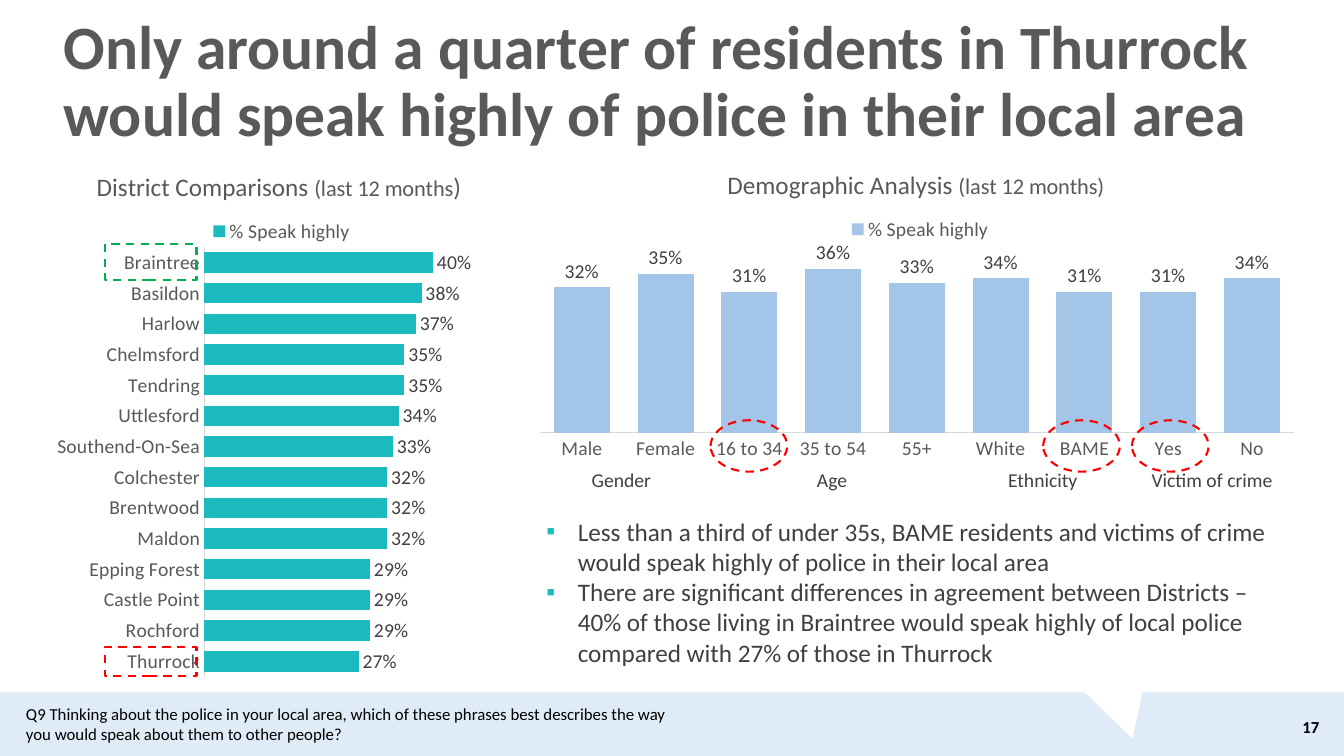
from dataclasses import dataclass
from typing import Any, Optional

from lxml.etree import SubElement
from pptx import Presentation
from pptx.chart.data import CategoryChartData
from pptx.dml.color import RGBColor as Rgb
from pptx.enum.chart import XL_CHART_TYPE as ChartType
from pptx.enum.chart import XL_LABEL_POSITION as LabelPos
from pptx.enum.chart import XL_LEGEND_POSITION as LegendPos
from pptx.enum.chart import XL_TICK_MARK as Tick
from pptx.enum.dml import MSO_LINE as Dash
from pptx.enum.shapes import MSO_SHAPE as Preset
from pptx.enum.text import MSO_ANCHOR as Anchor
from pptx.enum.text import MSO_AUTO_SIZE as AutoSize
from pptx.enum.text import PP_ALIGN as Align
from pptx.oxml.ns import qn
from pptx.util import Pt

Box = tuple[float, float, float, float]
Point = tuple[float, float]


@dataclass(frozen=True)
class Theme:
    font: str = "Calibri"
    heading: str = "595959"
    body: str = "404040"
    ink: str = "000000"
    paper: str = "FFFFFF"
    band: str = "DFEBF7"
    teal: str = "1BBABF"
    sky: str = "A2C5E8"
    axis: str = "D9D9D9"
    best: str = "00B050"
    worst: str = "FF0000"
    title_size: int = 44
    text_size: int = 18
    period_size: int = 16
    label_size: int = 14
    note_size: int = 12


THEME = Theme()


@dataclass(frozen=True)
class ChartSpec:
    kind: Any
    box: Box
    heading: tuple[tuple[str, int], ...]
    values: dict[str, float]
    color: str
    overlap: int
    top_value: float
    plot: Box
    title_at: Point
    legend_at: Point
    reverse: bool = False


@dataclass(frozen=True)
class Highlight:
    preset: Any
    box: Box
    color: str


# Content
TITLE = ("Only around a quarter of residents in Thurrock "
         "would speak highly of police in their local area")
FINDINGS = (
    "Less than a third of under 35s, BAME residents and victims of crime "
    "would speak highly of police in their local area",
    "There are significant differences in agreement between Districts – "
    "40% of those living in Braintree would speak highly of local police "
    "compared with 27% of those in Thurrock",
)
QUESTION = ("Q9 Thinking about the police in your local area, which of these phrases "
            "best describes the way you would speak about them to other people?")
GROUPS = {"Gender": 121.7, "Age": 179.3, "Ethnicity": 121.7, "Victim of crime": 120.2}

CHARTS = (
    ChartSpec(
        ChartType.COLUMN_CLUSTERED, (374.4, 107.3, 561.6, 227.5),
        (("Demographic Analysis ", THEME.text_size),
         ("(last 12 months)", THEME.period_size)),
        {"Male": 0.32, "Female": 0.35, "16 to 34": 0.31, "35 to 54": 0.36, "55+": 0.33,
         "White": 0.34, "BAME": 0.31, "Yes": 0.31, "No": 0.34},
        THEME.sky, -27, 0.4, (11.3, 72, 538.6, 130), (143, 11), (229.6, 45)),
    ChartSpec(
        ChartType.BAR_CLUSTERED, (25.9, 105.8, 344.2, 388.8),
        (("District Comparisons ", THEME.text_size),
         ("(last 12 months", THEME.period_size), (")", THEME.text_size)),
        {"Braintree": 0.40, "Basildon": 0.38, "Harlow": 0.37, "Chelmsford": 0.35,
         "Tendring": 0.35, "Uttlesford": 0.34, "Southend-On-Sea": 0.33,
         "Colchester": 0.32, "Brentwood": 0.32, "Maldon": 0.32,
         "Epping Forest": 0.29, "Castle Point": 0.29, "Rochford": 0.29,
         "Thurrock": 0.27},
        THEME.teal, 0, 0.5, (119.8, 70.8, 204.5, 306.8), (41, 14), (122, 48), True),
)
HIGHLIGHTS = (
    Highlight(Preset.RECTANGLE, (74.9, 174.2, 65.5, 25.9), THEME.best),
    Highlight(Preset.RECTANGLE, (74.9, 462.2, 65.5, 20.9), THEME.worst),
    *(Highlight(Preset.OVAL, (left, 300.2, 54.7, 36.7), THEME.worst)
      for left in (507.6, 745.2, 808.6)),
)


def points(values: tuple[float, ...]) -> list[Pt]:
    return [Pt(value) for value in values]


def apply(target: Any, values: dict[str, Any]) -> None:
    for attribute, value in values.items():
        setattr(target, attribute, value)


def style_font(font: Any, size: int, color: str, bold: bool = False) -> None:
    apply(font, {"name": THEME.font, "size": Pt(size), "bold": bold})
    font.color.rgb = Rgb.from_string(color)


def place(shape: Any, box: Box) -> None:
    apply(shape, dict(zip(("left", "top", "width", "height"), points(box))))


def write(frame: Any, texts: tuple[str, ...], size: int, color: str, bold: bool = False,
          anchor: Any = Anchor.TOP, **paragraph_format: Any) -> None:
    apply(frame, {"word_wrap": True, "auto_size": AutoSize.NONE, "vertical_anchor": anchor})
    for index, text in enumerate(texts):
        paragraph = frame.paragraphs[0] if index == 0 else frame.add_paragraph()
        apply(paragraph, paragraph_format)
        run = paragraph.add_run()
        run.text = text
        style_font(run.font, size, color, bold)


def add_bullet(paragraph: Any, color: str) -> None:
    props = paragraph._p.get_or_add_pPr()
    apply_indent = {"marL": Pt(22.5), "indent": -Pt(22.5)}
    for key, value in apply_indent.items():
        props.set(key, str(int(value)))
    SubElement(SubElement(props, qn("a:buClr")), qn("a:srgbClr"), val=color)
    SubElement(props, qn("a:buChar"), char="▪")


def set_layout(parent: Any, chart_box: Box, place_at: tuple[float, ...],
               after: Optional[str] = None) -> None:
    """Place a chart part by hand; place_at is in points from the chart corner."""
    for old in parent.findall(qn("c:layout")):
        parent.remove(old)
    layout = SubElement(parent, qn("c:layout"))
    manual = SubElement(layout, qn("c:manualLayout"))
    if len(place_at) == 4:
        SubElement(manual, qn("c:layoutTarget"), val="inner")
    for mode in ("xMode", "yMode"):
        SubElement(manual, qn(f"c:{mode}"), val="edge")
    for key, value, whole in zip("xywh", place_at, chart_box[2:] * 2):
        SubElement(manual, qn(f"c:{key}"), val=f"{value / whole:.4f}")
    parent.insert(0 if after is None else parent.index(parent.find(qn(after))) + 1, layout)


def add_chart(slide: Any, spec: ChartSpec) -> None:
    data = CategoryChartData(number_format="0%")
    data.categories = list(spec.values)
    data.add_series("% Speak highly", list(spec.values.values()))
    chart = slide.shapes.add_chart(spec.kind, *points(spec.box), data).chart
    style_font(chart.font, THEME.label_size, THEME.ink)
    # Heading and legend
    heading = chart.chart_title.text_frame.paragraphs[0]
    for text, size in spec.heading:
        run = heading.add_run()
        run.text = text
        style_font(run.font, size, THEME.heading)
    chart.has_legend = True
    apply(chart.legend, {"position": LegendPos.TOP, "include_in_layout": False})
    style_font(chart.legend.font, THEME.label_size, THEME.heading)
    # Axes
    districts = chart.category_axis
    apply(districts, {"major_tick_mark": Tick.NONE, "minor_tick_mark": Tick.NONE,
                      "has_major_gridlines": False, "reverse_order": spec.reverse})
    style_font(districts.tick_labels.font, THEME.label_size, THEME.heading)
    districts.format.line.color.rgb = Rgb.from_string(THEME.axis)
    districts.format.line.width = Pt(0.75)
    apply(chart.value_axis, {"minimum_scale": 0, "maximum_scale": spec.top_value,
                             "has_major_gridlines": False, "visible": False})
    # Bars and labels
    plot = chart.plots[0]
    apply(plot, {"gap_width": 50, "overlap": spec.overlap, "vary_by_categories": False,
                 "has_data_labels": True})
    apply(plot.data_labels, {"show_value": True, "position": LabelPos.OUTSIDE_END,
                             "number_format": "0%", "number_format_is_linked": False})
    style_font(plot.data_labels.font, THEME.label_size, THEME.body)
    bars = plot.series[0].format.fill
    bars.solid()
    bars.fore_color.rgb = Rgb.from_string(spec.color)
    # Positions inside the chart
    set_layout(chart._chartSpace.chart.plotArea, spec.box, spec.plot)
    set_layout(chart.chart_title._element, spec.box, spec.title_at, "c:tx")
    set_layout(chart.legend._element, spec.box, spec.legend_at, "c:legendPos")


def add_filled(slide: Any, preset: Any, box: Box, color: str, rotation: float = 0) -> None:
    shape = slide.shapes.add_shape(preset, *points(box))
    shape.shadow.inherit = False
    shape.rotation = rotation
    shape.fill.solid()
    shape.fill.fore_color.rgb = Rgb.from_string(color)
    shape.line.fill.background()


def add_highlight(slide: Any, highlight: Highlight) -> None:
    shape = slide.shapes.add_shape(highlight.preset, *points(highlight.box))
    shape.shadow.inherit = False
    shape.fill.background()
    shape.line.color.rgb = Rgb.from_string(highlight.color)
    apply(shape.line, {"width": Pt(1.5), "dash_style": Dash.DASH})


def add_groups(slide: Any, box: Box) -> None:
    table = slide.shapes.add_table(1, len(GROUPS), *points(box)).table
    apply(table, {"first_row": False, "horz_banding": False})
    for index, (group, width) in enumerate(GROUPS.items()):
        table.columns[index].width = Pt(width)
        cell = table.cell(0, index)
        cell.fill.background()
        cell.vertical_anchor = Anchor.MIDDLE
        paragraph = cell.text_frame.paragraphs[0]
        apply(paragraph, {"text": group, "alignment": Align.CENTER})
        style_font(paragraph.runs[0].font, THEME.label_size, THEME.body)


def main() -> None:
    deck = Presentation()
    apply(deck, {"slide_width": Pt(960), "slide_height": Pt(540)})
    slide = deck.slides.add_slide(deck.slide_layouts[1])
    # Title and findings
    title, findings = slide.placeholders
    place(title, (38.2, 22.3, 909.4, 74.2))
    write(title.text_frame, (TITLE,), THEME.title_size, THEME.heading, True,
          Anchor.MIDDLE, alignment=Align.LEFT, line_spacing=0.9)
    place(findings, (383, 365, 542.9, 138.2))
    write(findings.text_frame, FINDINGS, THEME.text_size, THEME.body, space_before=Pt(0))
    for paragraph in findings.text_frame.paragraphs:
        add_bullet(paragraph, THEME.teal)
    # Footer band with its notch, question and page number
    add_filled(slide, Preset.RECTANGLE, (0, 494.6, 960, 45.4), THEME.band)
    add_filled(slide, Preset.ISOSCELES_TRIANGLE, (774, 478.8, 55.4, 49.7), THEME.paper, 163.1)
    question = slide.shapes.add_textbox(*points((11.5, 499, 480.2, 36)))
    write(question.text_frame, (QUESTION,), THEME.note_size, THEME.ink)
    page = slide.shapes.add_textbox(*points((908.6, 504.7, 41, 28.8)))
    write(page.text_frame, ("17",), THEME.note_size, THEME.ink, True,
          Anchor.MIDDLE, alignment=Align.RIGHT)
    # Charts, demographic groups and highlights
    for spec in CHARTS:
        add_chart(slide, spec)
    add_groups(slide, (383, 329, 542.9, 29.5))
    for highlight in HIGHLIGHTS:
        add_highlight(slide, highlight)
    deck.save("out.pptx")


if __name__ == "__main__":
    main()
